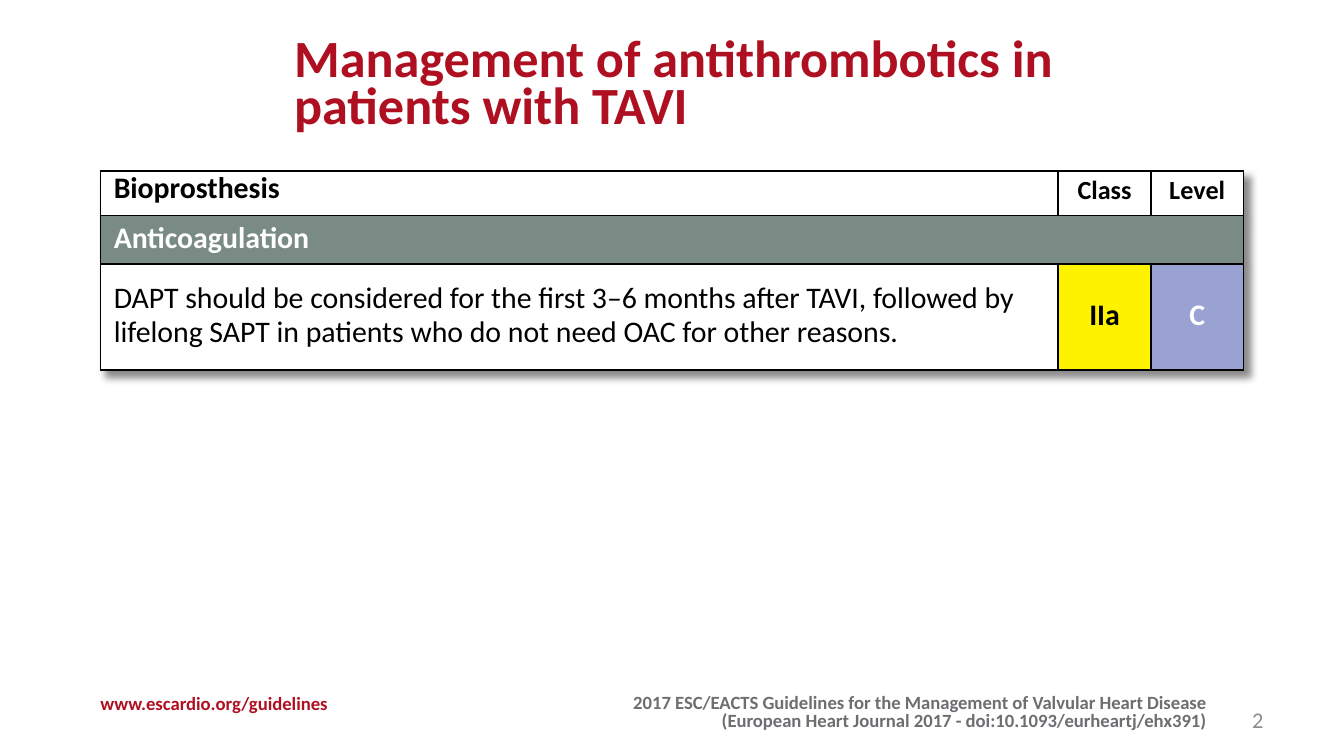
from dataclasses import dataclass

from lxml.etree import SubElement
from pptx import Presentation
from pptx.dml.color import RGBColor as Rgb
from pptx.enum.text import MSO_ANCHOR as Anchor, PP_ALIGN as Align
from pptx.oxml import parse_xml
from pptx.oxml.ns import nsdecls, qn
from pptx.util import Cm, Pt


@dataclass(frozen=True)
class Theme:
    font: str = "Calibri"
    red: str = "AE1022"
    gray: str = "6D6E71"
    pale: str = "8C8C8C"
    black: str = "000000"
    white: str = "FFFFFF"
    sage: str = "798B84"
    yellow: str = "FFF200"
    violet: str = "99A2D2"
    title: int = 28
    body: int = 16
    head: int = 14
    page: int = 12
    foot: int = 10


T = Theme()


@dataclass
class Style:
    size: int
    color: str
    bold: bool = True
    align: Align = Align.LEFT
    lead: int | None = None


@dataclass
class Label:
    text: str
    box: tuple[float, float, float, float]
    style: Style
    anchor: Anchor = Anchor.TOP


@dataclass
class Entry:
    text: str
    style: Style
    fill: str = T.white
    pad: float = 0.13
    right: float = 0.25
    span: int = 1


def format_text(frame, style: Style) -> None:
    for para in frame.paragraphs:
        para.alignment = style.align
        if style.lead:
            para.line_spacing = Pt(style.lead)
        for run in para.runs:
            font = run.font
            font.name, font.size, font.bold = T.font, Pt(style.size), style.bold
            font.color.rgb = Rgb.from_string(style.color)


def add_label(slide, label: Label) -> None:
    frame = slide.shapes.add_textbox(*map(Cm, label.box)).text_frame
    frame.word_wrap = True
    frame.vertical_anchor = label.anchor
    frame.text = label.text
    format_text(frame, label.style)


def add_border(cell) -> None:
    props = cell._tc.get_or_add_tcPr()
    for i, side in enumerate("LRTB"):
        line = parse_xml(
            f'<a:ln{side} {nsdecls("a")} w="{Pt(1)}"><a:solidFill>'
            f'<a:srgbClr val="{T.black}"/></a:solidFill></a:ln{side}>')
        props.insert(i, line)


def add_shadow(table) -> None:
    props = table._tbl.tblPr
    effects = SubElement(props, qn("a:effectLst"))
    effects.append(parse_xml(
        f'<a:outerShdw {nsdecls("a")} blurRad="{Pt(4)}" dist="{Pt(4)}" '
        'dir="2700000" algn="tl" rotWithShape="0"><a:srgbClr val="000000">'
        '<a:alpha val="45000"/></a:srgbClr></a:outerShdw>'))
    props.insert(0, effects)


def fill_cell(cell, entry: Entry) -> None:
    cell.fill.solid()
    cell.fill.fore_color.rgb = Rgb.from_string(entry.fill)
    cell.vertical_anchor = Anchor.MIDDLE
    cell.margin_top = cell.margin_bottom = Cm(entry.pad)
    cell.margin_left, cell.margin_right = Cm(0.25), Cm(entry.right)
    cell.text_frame.text = entry.text
    format_text(cell.text_frame, entry.style)


def add_grid(slide, left: float, top: float, cols: list[float],
             rows: list[float], data: list[list[Entry]]) -> None:
    table = slide.shapes.add_table(
        len(rows), len(cols), Cm(left), Cm(top), Cm(sum(cols)), Cm(sum(rows))).table
    for col, width in zip(table.columns, cols):
        col.width = Cm(width)
    for row, height in zip(table.rows, rows):
        row.height = Cm(height)
    for r, line in enumerate(data):
        for c, entry in enumerate(line):
            cell = table.cell(r, c)
            fill_cell(cell, entry)
            if entry.span > 1:
                cell.merge(table.cell(r, c + entry.span - 1))
    for cell in table.iter_cells():
        add_border(cell)
    add_shadow(table)


def main() -> None:
    deck = Presentation()
    deck.slide_width, deck.slide_height = Cm(25.4), Cm(14.29)
    slide = deck.slides.add_slide(deck.slide_layouts[6])

    # Footer, title and page number
    labels = [
        Label("2017 ESC/EACTS Guidelines for the Management of Valvular Heart Disease\n"
              "(European Heart Journal 2017 - doi:10.1093/eurheartj/ehx391)",
              (11.53, 13, 11.51, 0.96),
              Style(T.foot, T.gray, align=Align.RIGHT, lead=10)),
        Label("www.escardio.org/guidelines", (1.65, 12.95, 5, 0.69),
              Style(T.foot, T.red)),
        Label("Management of antithrombotics in patients with TAVI",
              (5.31, 0.66, 16.81, 2.08), Style(T.title, T.red, lead=25)),
        Label("2", (18.21, 13.23, 5.92, 0.76),
              Style(T.page, T.pale, False, Align.RIGHT), Anchor.MIDDLE),
    ]
    for label in labels:
        add_label(slide, label)

    # Recommendation table
    head = Style(T.head, T.black, align=Align.CENTER, lead=14)
    grade = Style(T.body, T.black, align=Align.CENTER, lead=18)
    level = Style(T.body, T.white, align=Align.CENTER, lead=18)
    data = [
        [Entry("Bioprosthesis", Style(T.body, T.black, lead=14)),
         Entry("Class", head), Entry("Level", head)],
        [Entry("Anticoagulation", Style(T.body, T.white, lead=18), T.sage, span=3)],
        [Entry("DAPT should be considered for the first 3–6 months after TAVI, "
               "followed by lifelong SAPT in patients who do not need OAC "
               "for other reasons.",
               Style(T.body, T.black, False, lead=18), pad=0.2, right=0),
         Entry("IIa", grade, T.yellow, 0.2),
         Entry("C", level, T.violet, 0.2)],
    ]
    add_grid(slide, 1.9, 3.23, [18.1, 1.75, 1.75], [0.84, 0.92, 2], data)

    deck.save("out.pptx")


if __name__ == "__main__":
    main()
